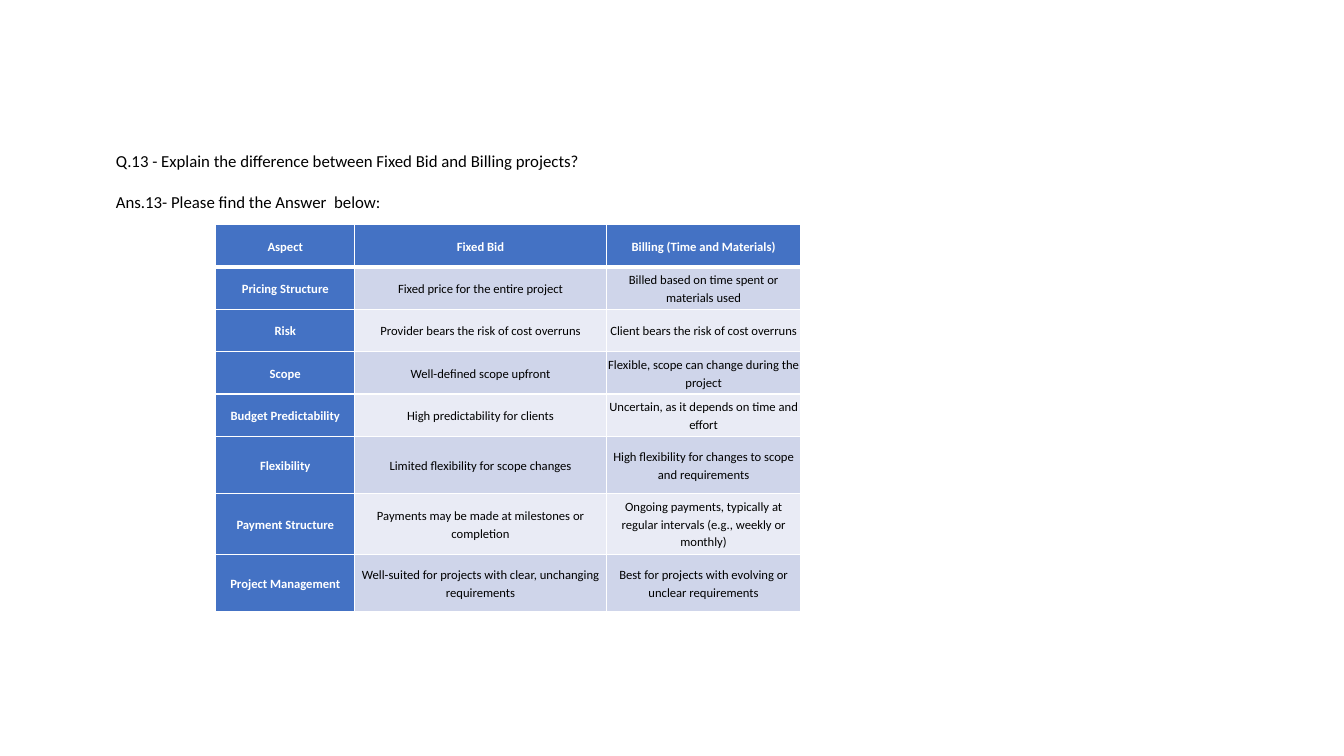
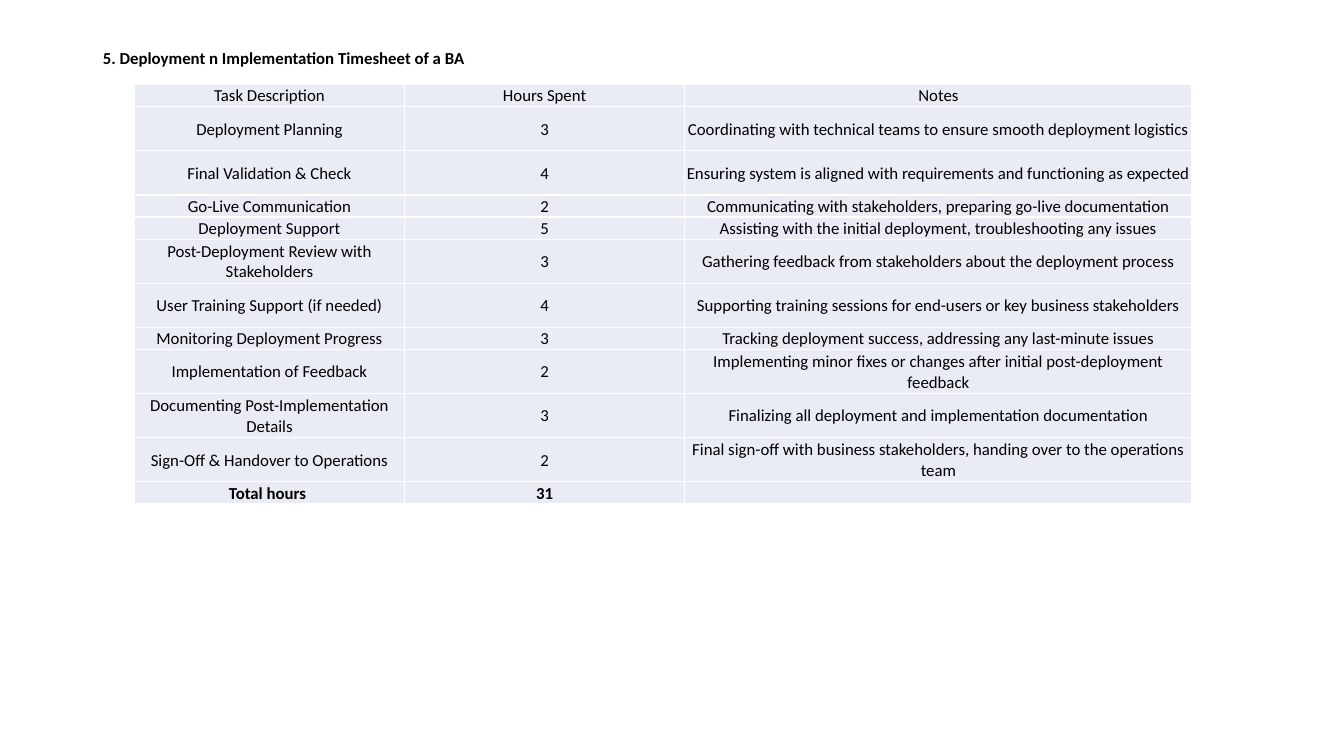
from lxml import etree
from pptx import Presentation
from pptx.dml.color import RGBColor
from pptx.enum.text import MSO_ANCHOR as Anchor, MSO_AUTO_SIZE as AutoSize, PP_ALIGN as Align
from pptx.oxml.ns import qn
from pptx.util import Inches, Pt

# Shared look
COLORS = {"header": "4472C4", "band": "CFD5EA", "pale": "E9EBF5", "text": "000000", "white": "FFFFFF"}
FONT = "Calibri"
TEXT_SIZE = 12
LINE_HEIGHT = 4.27  # box height of one text line, percent of the slide
WIDTH, HEIGHT = Inches(13.33), Inches(7.5)

COMPARISON = [
    ("Aspect", "Fixed Bid", "Billing (Time and Materials)"),
    ("Pricing Structure", "Fixed price for the entire project", "Billed based on time spent or materials used"),
    ("Risk", "Provider bears the risk of cost overruns", "Client bears the risk of cost overruns"),
    ("Scope", "Well-defined scope upfront", "Flexible, scope can change during the project"),
    ("Budget Predictability", "High predictability for clients", "Uncertain, as it depends on time and effort"),
    ("Flexibility", "Limited flexibility for scope changes",
     "High flexibility for changes to scope and requirements"),
    ("Payment Structure", "Payments may be made at milestones or completion",
     "Ongoing payments, typically at regular intervals (e.g., weekly or monthly)"),
    ("Project Management", "Well-suited for projects with clear, unchanging requirements",
     "Best for projects with evolving or unclear requirements"),
]

TIMESHEET = [
    ("Task Description", "Hours Spent", "Notes"),
    ("Deployment Planning", "3", "Coordinating with technical teams to ensure smooth deployment logistics"),
    ("Final Validation & Check", "4", "Ensuring system is aligned with requirements and functioning as expected"),
    ("Go-Live Communication", "2", "Communicating with stakeholders, preparing go-live documentation"),
    ("Deployment Support", "5", "Assisting with the initial deployment, troubleshooting any issues"),
    ("Post-Deployment Review with Stakeholders", "3",
     "Gathering feedback from stakeholders about the deployment process"),
    ("User Training Support (if needed)", "4",
     "Supporting training sessions for end-users or key business stakeholders"),
    ("Monitoring Deployment Progress", "3", "Tracking deployment success, addressing any last-minute issues"),
    ("Implementation of Feedback", "2",
     "Implementing minor fixes or changes after initial post-deployment feedback"),
    ("Documenting Post-Implementation Details", "3", "Finalizing all deployment and implementation documentation"),
    ("Sign-Off & Handover to Operations", "2",
     "Final sign-off with business stakeholders, handing over to the operations team"),
    ("Total hours ", "31", ""),
]
TIMESHEET_LINES = (1, 2, 2, 1, 1, 2, 2, 1, 2, 2, 2, 1)  # text lines each row has room for


def across(percent):
    return round(WIDTH * percent / 100)


def down(percent):
    return round(HEIGHT * percent / 100)


def apply(target, formats):
    for name, value in formats.items():
        setattr(target, name, value)


# Text
def write(frame, text, size=TEXT_SIZE, color="text", bold=False, **paragraph_formats):
    paragraph = frame.paragraphs[0]
    apply(paragraph, paragraph_formats)
    if not text:
        paragraph._p.get_or_add_endParaRPr().set("sz", str(size * 100))
        return
    run = paragraph.add_run()
    run.text = text
    apply(run.font, {"name": FONT, "size": Pt(size), "bold": bold})
    run.font.color.rgb = RGBColor.from_string(COLORS[color])


def format_line(shape, text, left, top, width, **formats):
    apply(shape, {"left": across(left), "top": down(top), "width": across(width), "height": down(LINE_HEIGHT)})
    apply(shape.text_frame, {"word_wrap": True, "auto_size": AutoSize.NONE, "vertical_anchor": Anchor.MIDDLE})
    write(shape.text_frame, text, **formats)


def add_titled_slide(presentation, *line, **formats):
    slide = presentation.slides.add_slide(presentation.slide_layouts[5])
    format_line(slide.shapes.title, *line, **formats)
    return slide


# Tables
def add_borders(cell, bottom=1):
    properties = cell._tc.get_or_add_tcPr()
    for index, (side, points) in enumerate({"L": 1, "R": 1, "T": 1, "B": bottom}.items()):
        line = etree.Element(qn(f"a:ln{side}"), w=str(Pt(points)))
        fill = etree.SubElement(line, qn("a:solidFill"))
        etree.SubElement(fill, qn("a:srgbClr"), val=COLORS["white"])
        properties.insert(index, line)


def add_grid(slide, rows, left, top, widths, heights, style, bottom_margin=0.01, **paragraph_formats):
    frame = slide.shapes.add_table(len(rows), len(widths), across(left), down(top),
                                   across(sum(widths)), down(sum(heights)))
    table = frame.table
    table.horz_banding = False
    for column, width in zip(table.columns, widths):
        column.width = across(width)
    for row, height in zip(table.rows, heights):
        row.height = down(height)
    margin = Inches(0.01)
    for r, texts in enumerate(rows):
        for c, text in enumerate(texts):
            cell = table.cell(r, c)
            fill, border, text_formats = style(r, c)
            apply(cell, {"margin_left": margin, "margin_right": margin, "margin_top": margin,
                         "margin_bottom": Inches(bottom_margin), "vertical_anchor": Anchor.MIDDLE})
            cell.fill.solid()
            cell.fill.fore_color.rgb = RGBColor.from_string(COLORS[fill])
            add_borders(cell, border)
            write(cell.text_frame, text, alignment=Align.CENTER, **text_formats, **paragraph_formats)


def comparison_style(row, column):
    if row == 0 or column == 0:
        return "header", 1 if row else 3, {"size": 9, "color": "white", "bold": True}
    return "band" if row % 2 else "pale", 1, {"size": 9}


def timesheet_style(row, column):
    return "pale", 1, {"bold": row == len(TIMESHEET) - 1}


# Slides
def build_comparison(presentation):
    slide = add_titled_slide(presentation, "Q.13 - Explain the difference between Fixed Bid and Billing projects?",
                             7.88, 19.2, 62.5, alignment=Align.JUSTIFY)
    answer = slide.shapes.add_textbox(0, 0, 0, 0)
    format_line(answer, "Ans.13- Please find the Answer  below:", 7.88, 24.53, 62.5, alignment=Align.JUSTIFY)
    add_grid(slide, COMPARISON, 16.05, 29.73, (10.35, 18.7, 14.5), [5.6] * 5 + [7.6, 8, 7.6],
             comparison_style, line_spacing=1.15, space_after=Pt(8))


def build_timesheet(presentation):
    slide = add_titled_slide(presentation, "5. Deployment n Implementation Timesheet of a BA",
                             6.9, 5.47, 86.25, bold=True, alignment=Align.LEFT)
    add_grid(slide, TIMESHEET, 10, 11.2, (20.1, 20.85, 37.75), [2.92 * lines for lines in TIMESHEET_LINES],
             timesheet_style, bottom_margin=0)


def main():
    presentation = Presentation()
    apply(presentation, {"slide_width": WIDTH, "slide_height": HEIGHT})
    build_comparison(presentation)
    build_timesheet(presentation)
    presentation.save("out.pptx")


if __name__ == "__main__":
    main()
